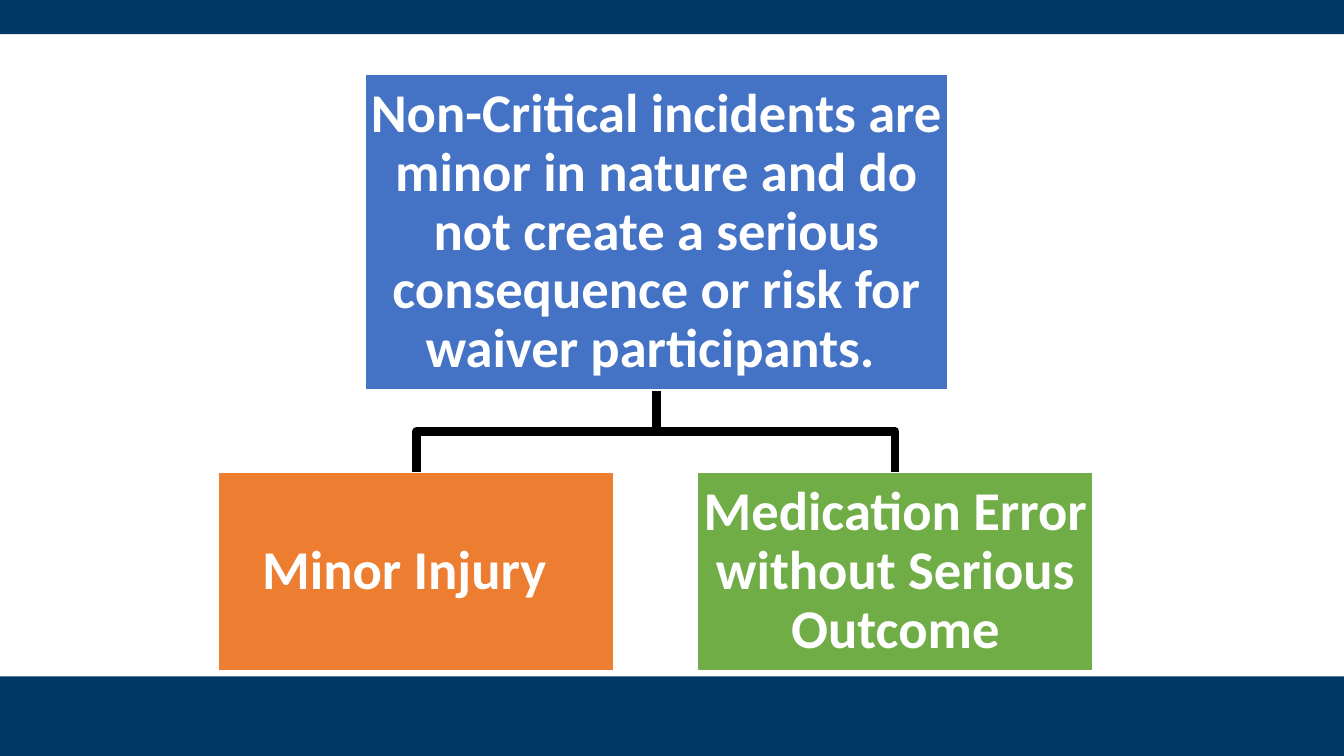
from dataclasses import dataclass

from pptx import Presentation
from pptx.dml.color import RGBColor
from pptx.enum.shapes import MSO_SHAPE
from pptx.enum.text import MSO_ANCHOR, PP_ALIGN
from pptx.shapes.autoshape import Shape
from pptx.slide import Slide
from pptx.util import Inches, Pt

RECTANGLE = MSO_SHAPE.RECTANGLE
MIDDLE = MSO_ANCHOR.MIDDLE
CENTER = PP_ALIGN.CENTER

COLORS = {
    "navy": "003865",
    "blue": "4472C4",
    "orange": "ED7D31",
    "green": "70AD47",
    "black": "000000",
    "white": "FFFFFF",
}
PAGE_WIDTH = 13.33
PAGE_HEIGHT = 7.5
INSET = 0.03


@dataclass(frozen=True)
class Box:
    left: float
    top: float
    width: float
    height: float
    color: str
    text: str = ""
    right_inset: float = INSET

    @property
    def center(self) -> float:
        return self.left + self.width / 2

    @property
    def bottom(self) -> float:
        return self.top + self.height


BANDS = [
    Box(0, 6.71, PAGE_WIDTH, 0.79, "navy"),
    Box(0, 0, PAGE_WIDTH, 0.34, "navy"),
]
DEFINITION = Box(
    3.62, 0.74, 5.78, 3.13, "blue",
    "Non-Critical incidents are minor in nature and do not create a serious "
    "consequence or risk for waiver participants. ",
)
EXAMPLES = [
    Box(2.17, 4.69, 3.92, 1.96, "orange", "Minor Injury", right_inset=0.27),
    Box(6.92, 4.69, 3.92, 1.96, "green", "Medication Error without Serious Outcome"),
]


def rgb(name: str) -> RGBColor:
    return RGBColor.from_string(COLORS[name])


def draw_rectangle(page: Slide, box: Box) -> Shape:
    shape = page.shapes.add_shape(
        RECTANGLE, Inches(box.left), Inches(box.top), Inches(box.width), Inches(box.height)
    )
    shape.shadow.inherit = False
    shape.fill.solid()
    shape.fill.fore_color.rgb = rgb(box.color)
    shape.line.fill.background()
    return shape


def write_text(shape: Shape, text: str, *, size: float, color: str, bold: bool,
               font: str, line_spacing: float, right_inset: float) -> None:
    frame = shape.text_frame
    frame.word_wrap = True
    frame.vertical_anchor = MIDDLE
    frame.margin_left = frame.margin_top = frame.margin_bottom = Inches(INSET)
    frame.margin_right = Inches(right_inset)
    para = frame.paragraphs[0]
    para.alignment = CENTER
    para.line_spacing = line_spacing
    span = para.add_run()
    span.text = text
    span.font.name = font
    span.font.size = Pt(size)
    span.font.bold = bold
    span.font.color.rgb = rgb(color)


def draw_box(page: Slide, box: Box) -> None:
    shape = draw_rectangle(page, box)
    shape.line.color.rgb = rgb("white")
    shape.line.width = Pt(1)
    write_text(shape, box.text, size=39, color="white", bold=True, font="Calibri",
               line_spacing=0.9, right_inset=box.right_inset)


def draw_branch(page: Slide, parent: Box, child: Box) -> None:
    bend = (parent.bottom + child.top) / 2
    points = [(parent.center, bend), (child.center, bend), (child.center, child.top)]
    builder = page.shapes.build_freeform(Inches(parent.center), Inches(parent.bottom))
    builder.add_line_segments([(Inches(x), Inches(y)) for x, y in points], close=False)
    branch = builder.convert_to_shape()
    branch.shadow.inherit = False
    branch.fill.background()
    branch.line.color.rgb = rgb("black")
    branch.line.width = Pt(6)


def main() -> None:
    deck = Presentation()
    deck.slide_width = Inches(PAGE_WIDTH)
    deck.slide_height = Inches(PAGE_HEIGHT)
    page = deck.slides.add_slide(deck.slide_layouts[6])
    for band in BANDS:
        draw_rectangle(page, band)
    for example in reversed(EXAMPLES):
        draw_branch(page, DEFINITION, example)
    for box in [DEFINITION, *EXAMPLES]:
        draw_box(page, box)
    deck.save("out.pptx")


if __name__ == "__main__":
    main()
